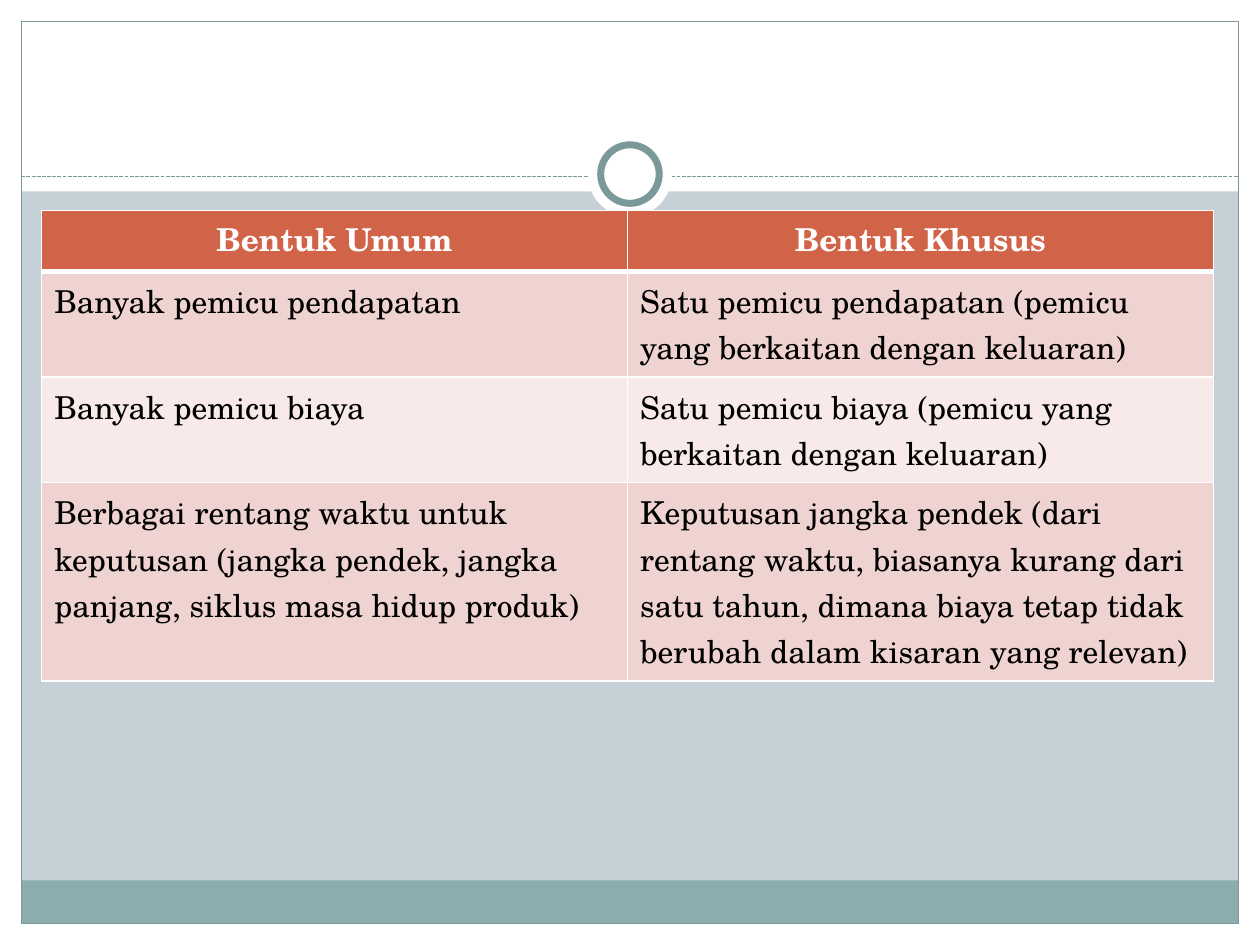
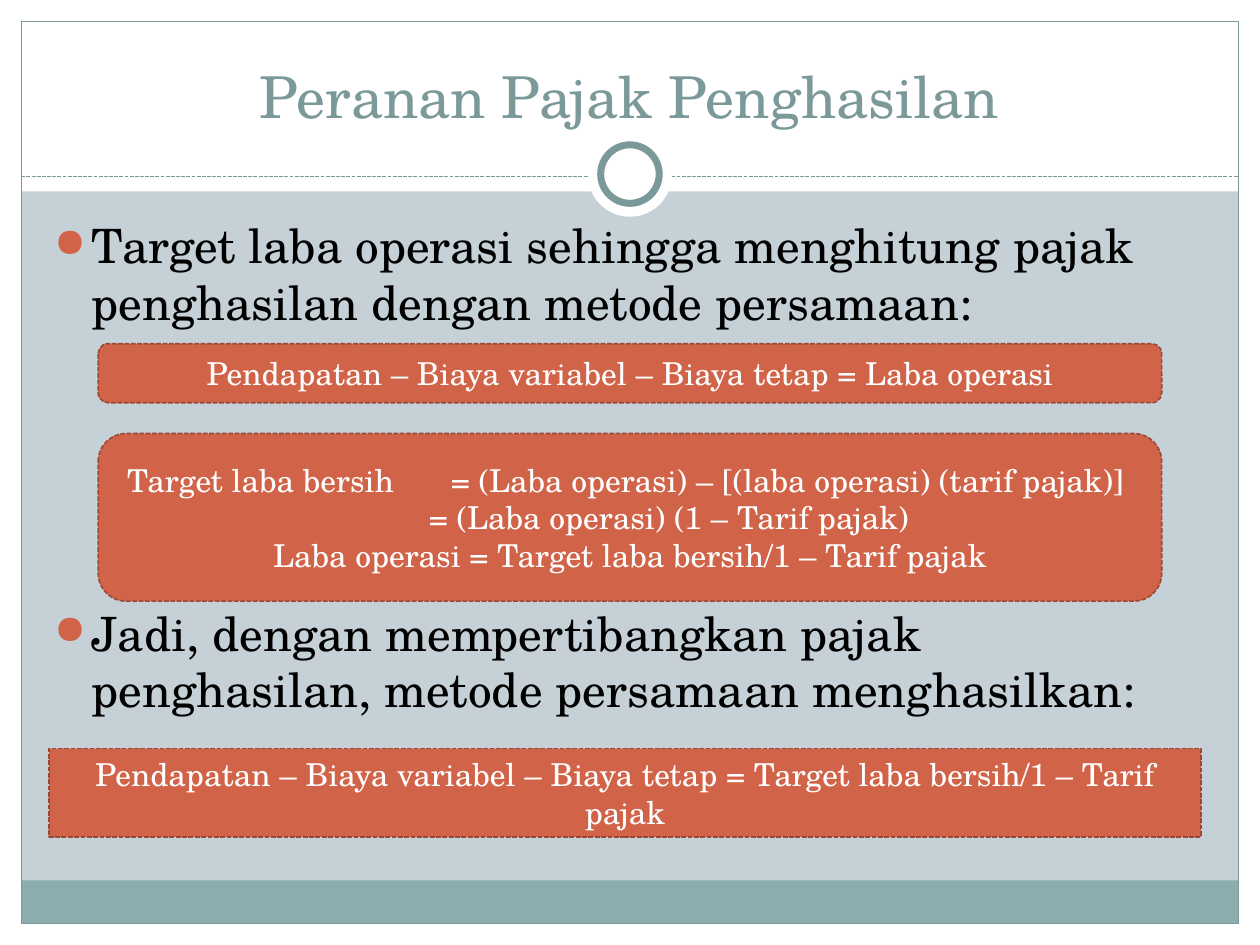
from lxml import etree
from pptx import Presentation
from pptx import util as u
from pptx.dml.color import RGBColor
from pptx.enum import dml, shapes, text
from pptx.oxml.ns import qn

HUES = {"white": "FFFFFF", "black": "000000", "back": "C5D1D7", "teal": "7C999A",
        "band": "8CADAE", "rust": "D16349", "edge": "9B4936",
        "rose": "EED3D0", "pale": "F7EAE9"}
FONT = "TeX Gyre Schola"
KIND = shapes.MSO_SHAPE
MID = text.PP_ALIGN.CENTER


def write(frame, lines, size=18, hue="white", bold=False, align=MID,
          anchor=text.MSO_ANCHOR.MIDDLE, pitch=None):
    frame.word_wrap = True
    frame.vertical_anchor = anchor
    for i, line in enumerate(lines):
        para = frame.paragraphs[0] if i == 0 else frame.add_paragraph()
        para.alignment = align
        para.line_spacing = pitch
        run = para.add_run()
        run.text = line
        run.font.name, run.font.size, run.font.bold = FONT, u.Pt(size), bold
        run.font.color.rgb = RGBColor.from_string(HUES[hue])
    return frame.paragraphs


def draw(slide, kind, spot, fill=None, edge=None, width=0.75, dash=None):
    shape = slide.shapes.add_shape(kind, *map(u.Cm, spot))
    shape.shadow.inherit = False
    if fill:
        shape.fill.solid()
        shape.fill.fore_color.rgb = RGBColor.from_string(HUES[fill])
    else:
        shape.fill.background()
    if edge:
        shape.line.color.rgb = RGBColor.from_string(HUES[edge])
        shape.line.width = u.Pt(width)
        shape.line.dash_style = dash
    else:
        shape.line.fill.background()
    return shape


deck = Presentation()
deck.slide_width, deck.slide_height = u.Cm(25.4), u.Cm(19.05)
slides = [deck.slides.add_slide(deck.slide_layouts[6]) for _ in range(2)]
DASH = dml.MSO_LINE.SQUARE_DOT

for slide in slides:
    slide.background.fill.solid()
    slide.background.fill.fore_color.rgb = RGBColor.from_string(HUES["back"])
    for spot, hue in [((0, 18.62, 25.4, 0.43), "white"),
                      ((0, 0, 25.4, 3.86), "white"),
                      ((0, 0, 0.43, 19.05), "white"),
                      ((24.97, 0, 0.43, 19.05), "white"),
                      ((0.43, 17.75, 24.54, 0.87), "band")]:
        draw(slide, KIND.RECTANGLE, spot, hue)
    draw(slide, KIND.RECTANGLE, (0.43, 0.43, 24.54, 18.19), edge="teal")
    rule = slide.shapes.add_connector(shapes.MSO_CONNECTOR.STRAIGHT, u.Cm(0.43),
                                      u.Cm(3.56), u.Cm(24.97), u.Cm(3.56))
    rule.line.color.rgb = RGBColor.from_string(HUES["teal"])
    rule.line.width = u.Pt(0.75)
    rule.line.dash_style = DASH
    etree.SubElement(rule.element.spPr, qn("a:effectLst"))
    draw(slide, KIND.OVAL, (11.85, 2.67, 1.7, 1.7), "white")
    draw(slide, KIND.OVAL, (12.11, 2.92, 1.18, 1.18), "white", "teal", 4)

forms, tax = slides

rows = [
    ("Bentuk Umum", "Bentuk Khusus"),
    ("Banyak pemicu pendapatan",
     "Satu pemicu pendapatan (pemicu yang berkaitan dengan keluaran)"),
    ("Banyak pemicu biaya",
     "Satu pemicu biaya (pemicu yang berkaitan dengan keluaran)"),
    ("Berbagai rentang waktu untuk keputusan (jangka pendek, jangka panjang, "
     "siklus masa hidup produk)",
     "Keputusan jangka pendek (dari rentang waktu, biasanya kurang dari satu tahun, "
     "dimana biaya tetap tidak berubah dalam kisaran yang relevan)"),
]
tall = [1.23, 2.13, 2.13, 3.99]
grid = forms.shapes.add_table(4, 2, u.Cm(0.84), u.Cm(4.24),
                              u.Cm(23.62), u.Cm(sum(tall))).table
grid.horz_banding = False
for r, row in enumerate(rows):
    grid.rows[r].height = u.Cm(tall[r])
    for c, words in enumerate(row):
        cell = grid.cell(r, c)
        head = r == 0
        write(cell.text_frame, [words], hue="white" if head else "black", bold=head,
              align=MID if head else text.PP_ALIGN.LEFT,
              anchor=text.MSO_ANCHOR.TOP, pitch=u.Pt(26.5))
        cell.fill.solid()
        fill = "rust" if head else ("pale", "rose")[r % 2]
        cell.fill.fore_color.rgb = RGBColor.from_string(HUES[fill])
        props = cell._tc.get_or_add_tcPr()
        for i, side in enumerate(("lnL", "lnR", "lnT", "lnB")):
            thick = 3 if (r, side) in [(0, "lnB"), (1, "lnT")] else 1
            edge = etree.Element(qn("a:" + side), w=str(u.Pt(thick)))
            paint = etree.SubElement(edge, qn("a:solidFill"))
            etree.SubElement(paint, qn("a:srgbClr"), val=HUES["white"])
            props.insert(i, edge)

title = tax.shapes.add_textbox(*map(u.Cm, (0.84, 0.64, 23.7, 2.11)))
write(title.text_frame, ["Peranan Pajak Penghasilan"], size=33, hue="teal",
      anchor=text.MSO_ANCHOR.BOTTOM)

body = tax.shapes.add_textbox(*map(u.Cm, (0.84, 4.24, 23.62, 13.61)))
points = write(body.text_frame, [
    "Target laba operasi sehingga menghitung pajak penghasilan dengan metode persamaan:",
    "Jadi, dengan mempertibangkan pajak penghasilan, metode persamaan menghasilkan:",
], size=27, hue="black", align=text.PP_ALIGN.LEFT, anchor=text.MSO_ANCHOR.TOP)
points[1].space_before = u.Pt(156.5)
for point in points:
    props = point._p.get_or_add_pPr()
    props.set("marL", str(u.Cm(0.76)))
    props.set("indent", str(u.Cm(-0.76)))
    paint = etree.SubElement(props, qn("a:buClr"))
    etree.SubElement(paint, qn("a:srgbClr"), val=HUES["rust"])
    etree.SubElement(props, qn("a:buSzPct"), val="85000")
    etree.SubElement(props, qn("a:buChar"), char="●")

sums = [
    (KIND.ROUNDED_RECTANGLE, (1.98, 6.93, 21.44, 1.19),
     ["Pendapatan – Biaya variabel – Biaya tetap = Laba operasi"]),
    (KIND.ROUNDED_RECTANGLE, (1.98, 8.74, 21.44, 3.38),
     ["Target laba bersih\t = (Laba operasi) – [(laba operasi) (tarif pajak)] ",
      "= (Laba operasi) (1 – Tarif pajak)",
      "Laba operasi = Target laba bersih/1 – Tarif pajak"]),
    (KIND.RECTANGLE, (0.99, 15.09, 23.22, 1.78),
     ["Pendapatan – Biaya variabel – Biaya tetap = Target laba bersih/1 – Tarif pajak"]),
]
for kind, spot, lines in sums:
    box = draw(tax, kind, spot, "rust", "edge", 0.9, DASH)
    paras = write(box.text_frame, lines)
    if len(lines) > 1:
        paras[1]._p.get_or_add_pPr().set("marL", str(u.Cm(1.57)))

deck.save("out.pptx")
